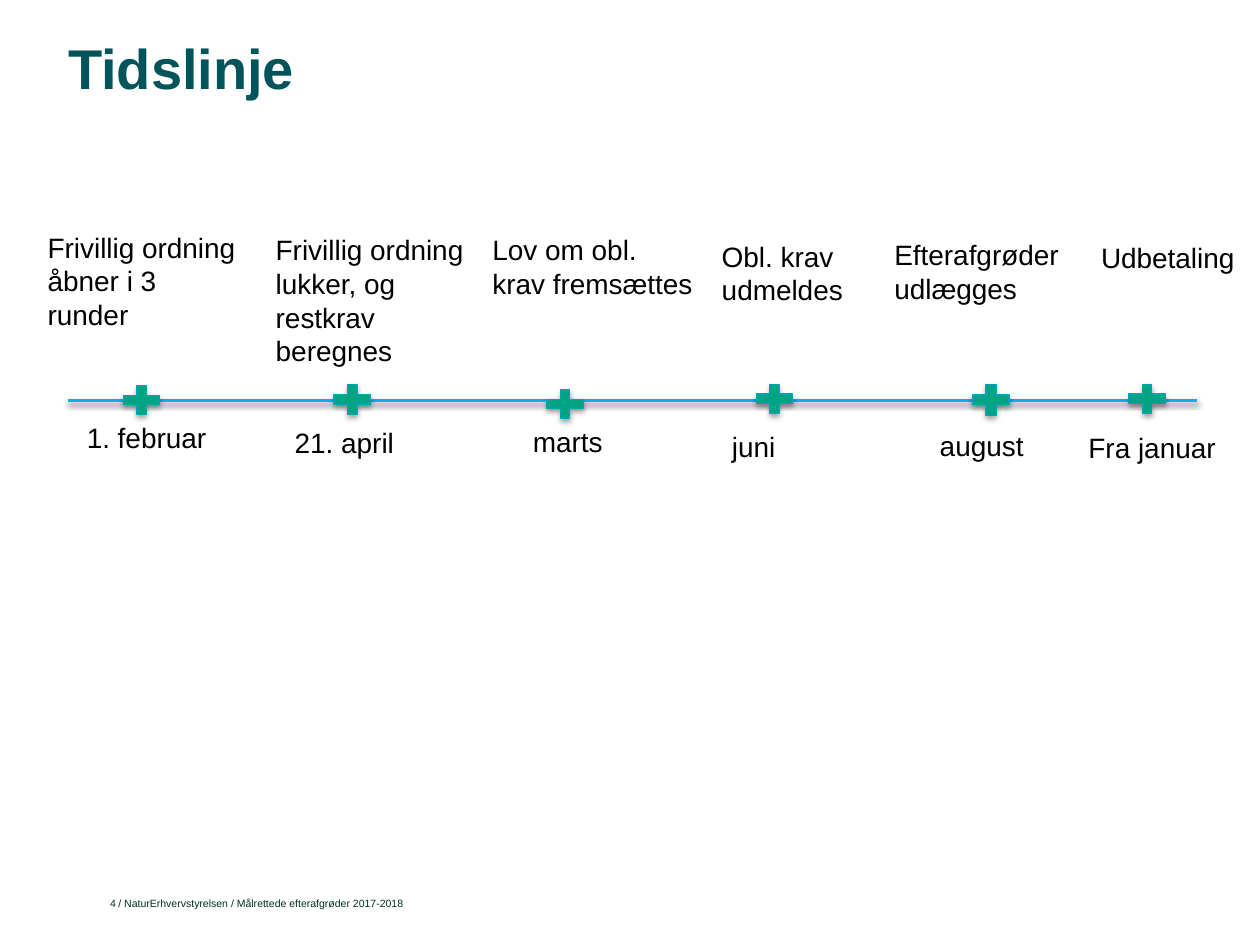
from dataclasses import dataclass

from lxml import etree
from pptx import Presentation
from pptx.dml.color import RGBColor
from pptx.enum.shapes import MSO_CONNECTOR, MSO_SHAPE
from pptx.enum.text import MSO_ANCHOR, MSO_AUTO_SIZE, PP_ALIGN
from pptx.oxml.ns import qn
from pptx.util import Inches, Pt

STRAIGHT = MSO_CONNECTOR.STRAIGHT
PLUS = MSO_SHAPE.MATH_PLUS
TOP, BOTTOM = MSO_ANCHOR.TOP, MSO_ANCHOR.BOTTOM
LEFT, RIGHT = PP_ALIGN.LEFT, PP_ALIGN.RIGHT
FIT_SHAPE, NO_FIT = MSO_AUTO_SIZE.SHAPE_TO_FIT_TEXT, MSO_AUTO_SIZE.NONE
TITLE_ONLY = 5


@dataclass(frozen=True)
class Theme:
    font: str = "Arial"
    title_color: str = "00545A"
    text_color: str = "000000"
    footer_color: str = "003127"
    line_color: str = "00B0F0"
    marker_fill: str = "00A483"
    marker_line: str = "00A3B1"
    shadow_color: str = "000000"
    title_size: int = 32
    text_size: int = 16
    footer_size: int = 6


@dataclass(frozen=True)
class Milestone:
    event: str
    event_box: tuple
    date: str
    date_box: tuple
    marker_box: tuple


MILESTONES = [
    Milestone("Frivillig ordning åbner i 3 runder", (0.28, 1.78, 1.73, 0.64),
              "1. februar", (0.59, 3.29, 1.21, 0.37), (0.93, 3.02, 0.39, 0.31)),
    Milestone("Frivillig ordning lukker, og restkrav beregnes", (2.09, 1.8, 1.73, 1.18),
              "21. april", (2.24, 3.33, 1.12, 0.37), (2.6, 3.01, 0.39, 0.32)),
    Milestone("Lov om obl. krav fremsættes", (3.81, 1.8, 1.81, 0.64),
              "marts", (4.13, 3.32, 0.89, 0.37), (4.29, 3.05, 0.39, 0.31)),
    Milestone("Obl. krav udmeldes", (5.63, 1.85, 1.73, 0.64),
              "juni", (5.71, 3.36, 0.89, 0.37), (5.95, 3.01, 0.39, 0.31)),
    Milestone("Efterafgrøder udlægges", (7, 1.84, 1.73, 0.64),
              "august", (7.36, 3.35, 0.89, 0.37), (7.67, 3.01, 0.39, 0.33)),
    Milestone("Udbetaling", (8.64, 1.86, 1.73, 0.37),
              "Fra januar", (8.54, 3.37, 1.38, 0.37), (8.91, 3.01, 0.39, 0.31)),
]


class TimelineSlide:
    def __init__(self, presentation, theme):
        self.theme = theme
        self.slide = presentation.slides.add_slide(presentation.slide_layouts[TITLE_ONLY])

    def set_text(self, shape, text, size, color, bold=False, align=LEFT):
        shape.text_frame.text = text
        paragraph = shape.text_frame.paragraphs[0]
        paragraph.alignment = align
        font = paragraph.runs[0].font
        font.name = self.theme.font
        font.size = Pt(size)
        font.bold = bold
        font.color.rgb = RGBColor.from_string(color)
        return paragraph

    def remove_margins(self, frame):
        frame.margin_left = frame.margin_right = Inches(0)
        frame.margin_top = frame.margin_bottom = Inches(0)

    def title(self, text, box):
        shape = self.slide.shapes.title
        shape.left, shape.top, shape.width, shape.height = map(Inches, box)
        frame = shape.text_frame
        self.remove_margins(frame)
        frame.auto_size = NO_FIT
        frame.vertical_anchor = TOP
        paragraph = self.set_text(shape, text, self.theme.title_size, self.theme.title_color, True)
        paragraph.line_spacing = 0.9

    def text_box(self, box):
        shape = self.slide.shapes.add_textbox(*map(Inches, box))
        shape.text_frame.word_wrap = True
        return shape

    def label(self, text, box):
        shape = self.text_box(box)
        shape.text_frame.auto_size = FIT_SHAPE
        self.set_text(shape, text, self.theme.text_size, self.theme.text_color)

    def footer(self, text, box, align=LEFT):
        shape = self.text_box(box)
        self.remove_margins(shape.text_frame)
        shape.text_frame.vertical_anchor = BOTTOM
        self.set_text(shape, text, self.theme.footer_size, self.theme.footer_color, align=align)

    def shadow(self, properties, opacity, distance):
        effects = etree.SubElement(properties, qn("a:effectLst"))
        outer = etree.SubElement(
            effects, qn("a:outerShdw"), blurRad=str(Pt(3.1)), dist=str(Pt(distance)),
            dir="5400000", rotWithShape="0")
        color = etree.SubElement(outer, qn("a:srgbClr"), val=self.theme.shadow_color)
        etree.SubElement(color, qn("a:alpha"), val=str(opacity * 1000))

    def axis(self, start, end):
        connector = self.slide.shapes.add_connector(STRAIGHT, *map(Inches, start + end))
        connector.line.color.rgb = RGBColor.from_string(self.theme.line_color)
        connector.line.width = Pt(2)
        self.shadow(connector._element.spPr, 38, 1.6)

    def marker(self, box):
        shape = self.slide.shapes.add_shape(PLUS, *map(Inches, box))
        shape.fill.solid()
        shape.fill.fore_color.rgb = RGBColor.from_string(self.theme.marker_fill)
        shape.line.color.rgb = RGBColor.from_string(self.theme.marker_line)
        shape.line.width = Pt(0.75)
        self.shadow(shape._element.spPr, 35, 1.8)


def main():
    presentation = Presentation()
    presentation.slide_width = Inches(10)
    presentation.slide_height = Inches(7.5)

    timeline = TimelineSlide(presentation, Theme())
    timeline.title("Tidslinje", (0.54, 0.33, 8.93, 0.51))
    timeline.footer("/ NaturErhvervstyrelsen / Målrettede efterafgrøder 2017-2018",
                    (0.94, 7, 4.64, 0.22))
    timeline.footer("4", (0.67, 7, 0.25, 0.22), RIGHT)
    timeline.axis((0.54, 3.18), (9.5, 3.18))
    for milestone in MILESTONES:
        timeline.marker(milestone.marker_box)
        timeline.label(milestone.event, milestone.event_box)
        timeline.label(milestone.date, milestone.date_box)

    presentation.save("out.pptx")


if __name__ == "__main__":
    main()
